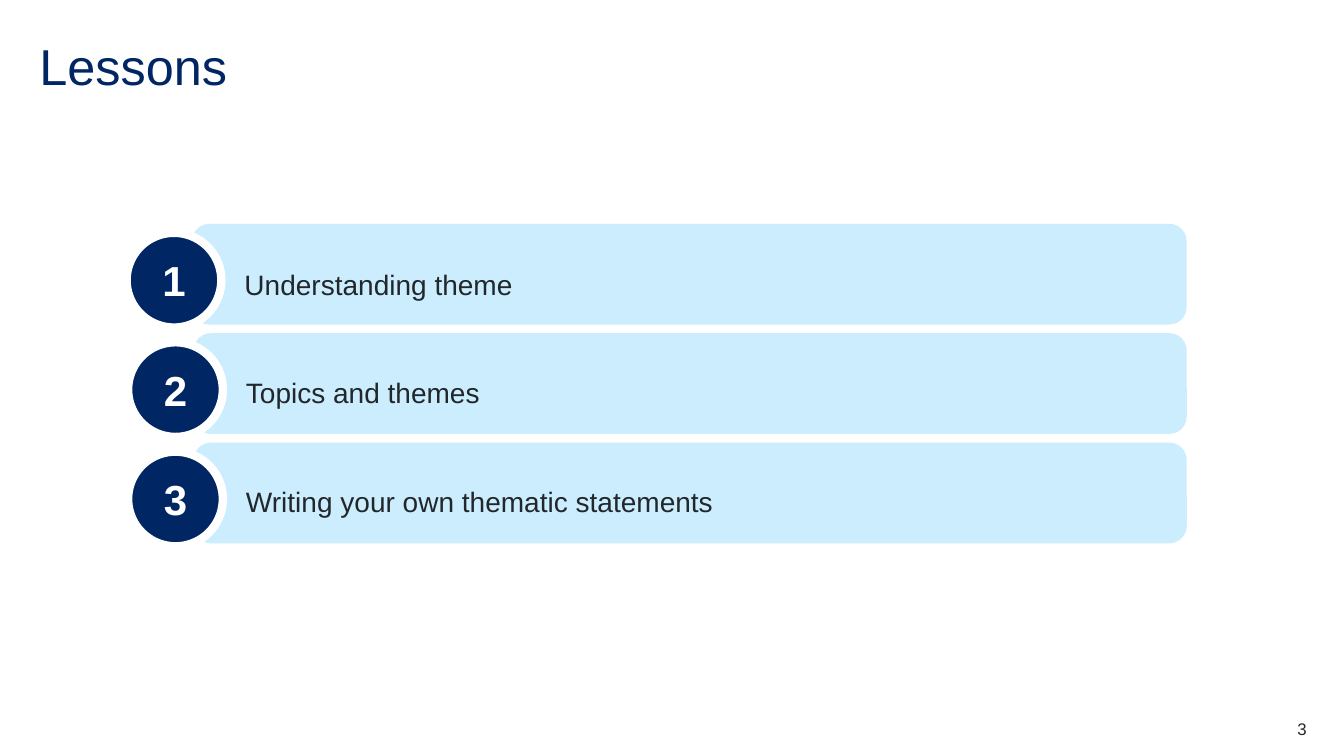
import pptx
import pptx.dml.color
import pptx.enum.shapes
import pptx.enum.text
import pptx.util

SHAPE = pptx.enum.shapes.MSO_SHAPE
ANCHOR = pptx.enum.text.MSO_ANCHOR
ALIGN = pptx.enum.text.PP_ALIGN
NAVY, SKY, INK, WHITE = "002664", "CBEDFD", "22272B", "FFFFFF"


def color(hex_code):
    return pptx.dml.color.RGBColor.from_string(hex_code)


class Deck:
    """Style and current slide; every box is (left, top, width, height) in percent of the slide."""
    font = "Arial"

    def __init__(self):
        self.prs = pptx.Presentation()
        self.prs.slide_width = pptx.util.Inches(13.33)
        self.prs.slide_height = pptx.util.Inches(7.5)
        self.s = self.prs.slides.add_slide(self.prs.slide_layouts[6])

    def place(self, box):
        sides = (self.prs.slide_width, self.prs.slide_height) * 2
        return [round(side * share / 100) for side, share in zip(sides, box)]

    def set_text(self, sp, text, size, hex_code, align=ALIGN.LEFT, anchor=ANCHOR.TOP,
                 spacing=1.0, bold=False):
        tf = sp.text_frame
        tf.word_wrap = True
        tf.vertical_anchor = anchor
        tf.margin_left = tf.margin_top = tf.margin_right = tf.margin_bottom = 0
        p = tf.paragraphs[0]
        p.text = text
        p.alignment = align
        p.line_spacing = spacing
        p.font.name = self.font
        p.font.size = pptx.util.Pt(size)
        p.font.bold = bold
        p.font.color.rgb = color(hex_code)

    def text(self, box, text, size, hex_code, **style):
        sp = self.s.shapes.add_textbox(*self.place(box))
        self.set_text(sp, text, size, hex_code, **style)

    def shape(self, kind, box, fill):
        sp = self.s.shapes.add_shape(kind, *self.place(box))
        sp.shadow.inherit = False
        sp.fill.solid()
        sp.fill.fore_color.rgb = color(fill)
        sp.line.fill.background()
        return sp

    def bar(self, box):
        self.shape(SHAPE.ROUNDED_RECTANGLE, box, SKY).adjustments[0] = 0.173

    def badge(self, box, number):
        sp = self.shape(SHAPE.OVAL, box, NAVY)
        sp.line.color.rgb = color(WHITE)
        sp.line.width = pptx.util.Pt(6)
        self.set_text(sp, str(number), 30, WHITE, align=ALIGN.CENTER,
                      anchor=ANCHOR.MIDDLE, bold=True)

    def label(self, box, text):
        sp = self.shape(SHAPE.RECTANGLE, box, SKY)
        self.set_text(sp, text, 20, INK, spacing=1.5)
        sp.text_frame.auto_size = pptx.enum.text.MSO_AUTO_SIZE.SHAPE_TO_FIT_TEXT


def main():
    deck = Deck()
    deck.text((2.93, 5.2, 94.22, 8), "Lessons", 36, NAVY,
              anchor=ANCHOR.MIDDLE, spacing=0.9)

    # Each lesson: text, label width, horizontal nudge, label drop below the bar's top
    lessons = [("Understanding theme", 27.23, -0.11, 3.6),
               ("Topics and themes", 27.23, 0, 3.33),
               ("Writing your own thematic statements", 56.11, 0, 3.33)]
    first_top, pitch = 29.6, 14.47
    for i, (lesson, width, nudge, drop) in enumerate(lessons):
        top = first_top + i * pitch
        deck.bar((14.4 + nudge, top, 73.9 - nudge, 13.33))
        deck.badge((9.53 + nudge, top + 1.2, 7.05, 12.53), i + 1)
        deck.label((18.3 + nudge, top + drop, width, 5.87), lesson)

    deck.text((91.3, 95.07, 5.93, 2.67), "3", 12, INK, align=ALIGN.RIGHT)
    deck.prs.save("out.pptx")


if __name__ == "__main__":
    main()
